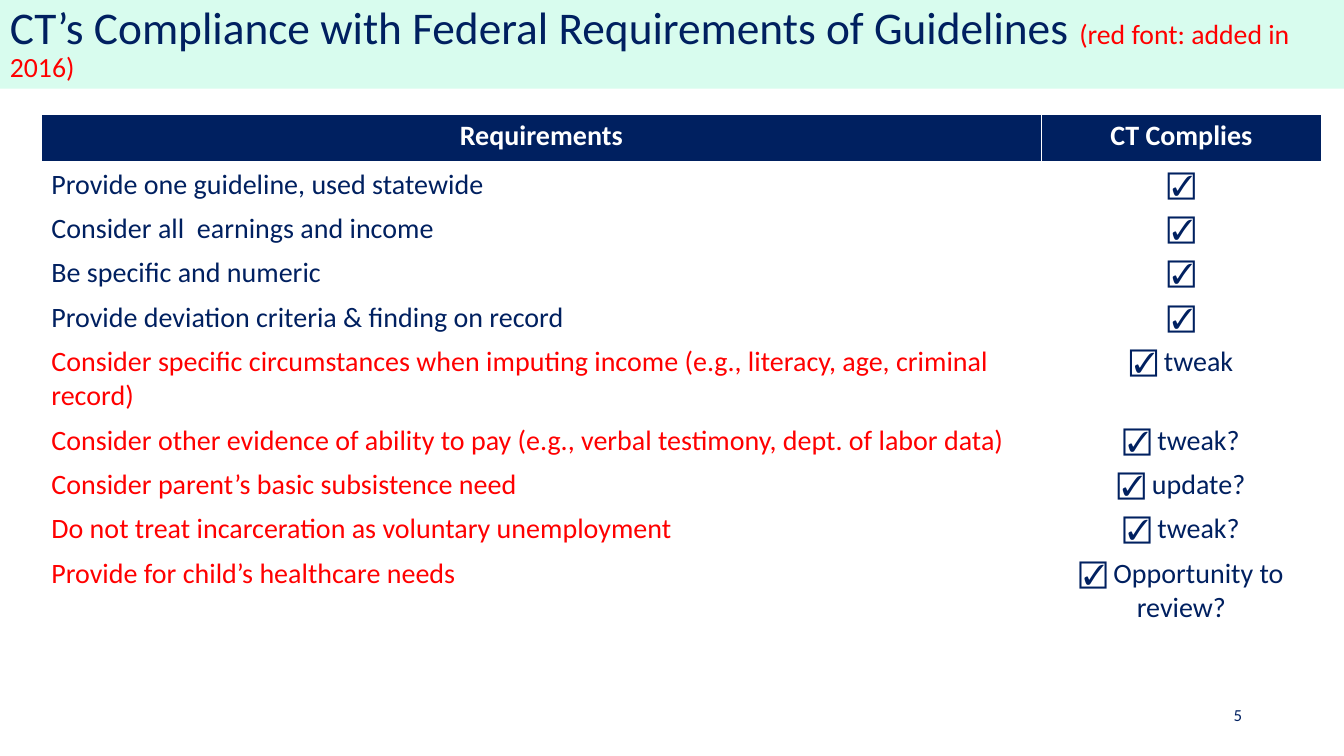
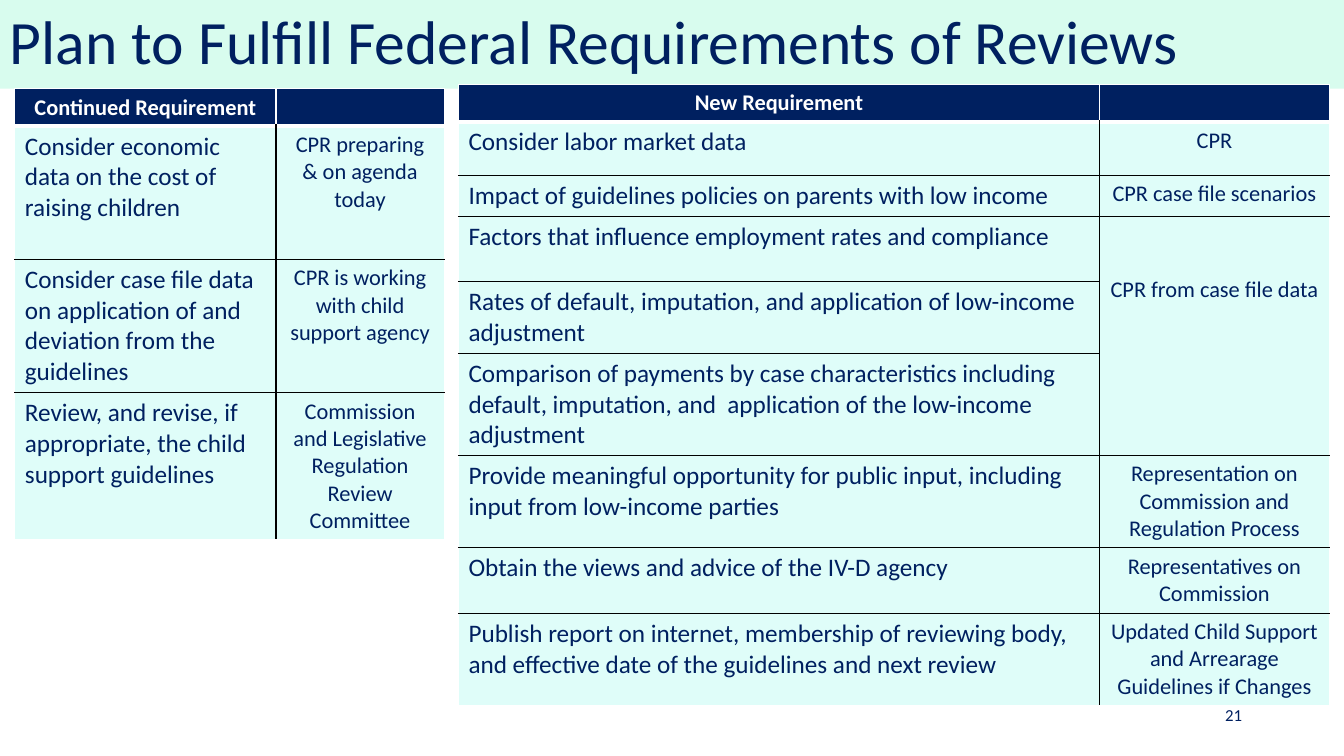
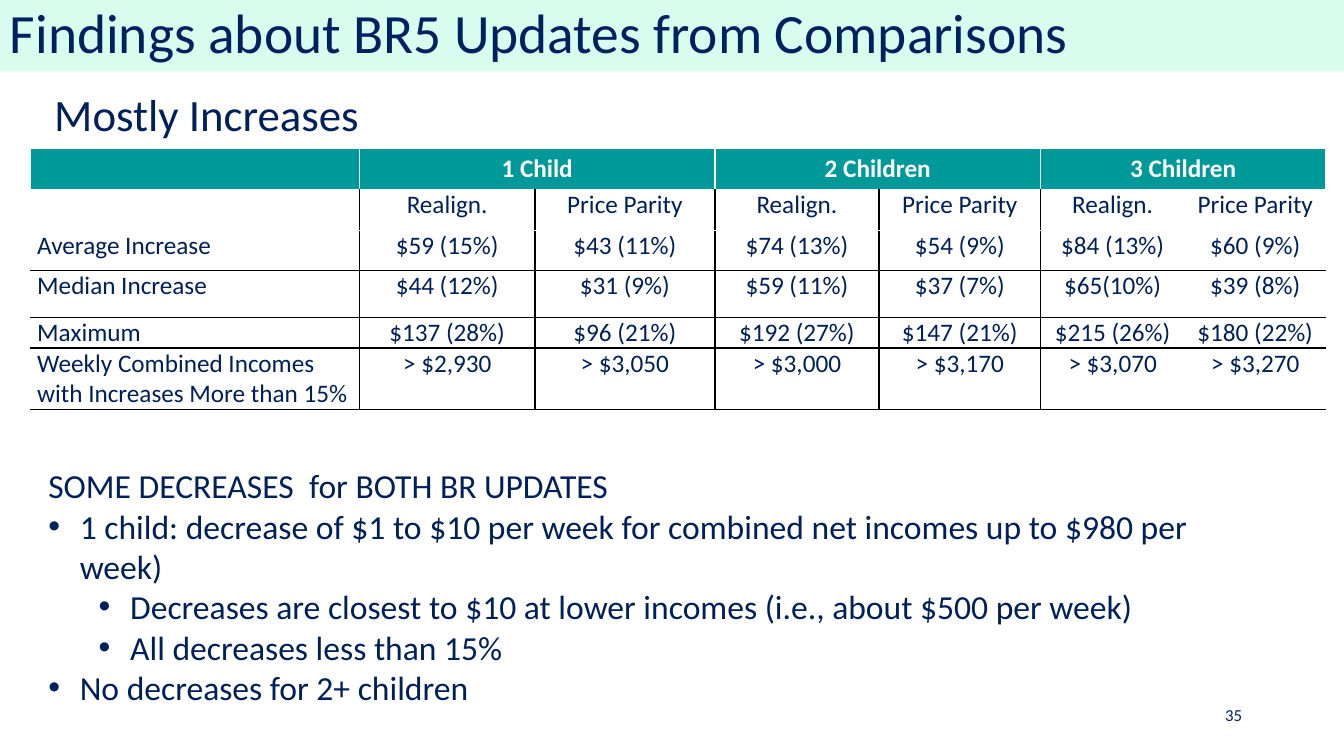
"""Build three slides on child support guideline requirements and review findings."""
from lxml import etree
from pptx import Presentation
from pptx.dml.color import RGBColor
from pptx.enum.shapes import MSO_SHAPE
from pptx.enum.text import MSO_ANCHOR, PP_ALIGN
from pptx.oxml.ns import qn
from pptx.util import Pt

LEFT, CENTER, RIGHT = PP_ALIGN.LEFT, PP_ALIGN.CENTER, PP_ALIGN.RIGHT
MIDDLE = MSO_ANCHOR.MIDDLE
RECTANGLE = MSO_SHAPE.RECTANGLE

FONT = "Calibri"
NAVY, INK, RED, WHITE, BLACK = "002060", "00205B", "FF0000", "FFFFFF", "000000"
MINT, PALE, TEAL = "D8FCEE", "DFFDF9", "009999"
PLAIN_TABLE = "{2D5ABB26-0587-4C30-8999-92F81FD0307C}"
SLIDE_WIDTH, SLIDE_HEIGHT = 960, 540

COMPLIANCE = {
    "at": (29.5, 81.4), "columns": (714.3, 200.2),
    "heights": (34.6, *[31.7] * 4, 56.1, *[31.7] * 3, 56.1),
    "header_fill": NAVY, "header_size": 20, "header_rule": 3,
    "sizes": (20, 20), "ink": NAVY, "red_from": 5,
    "rows": [
        ("Requirements", "CT Complies"),
        ("Provide one guideline, used statewide", "☑"),
        ("Consider all  earnings and income", "☑"),
        ("Be specific and numeric", "☑"),
        ("Provide deviation criteria & finding on record", "☑"),
        ("Consider specific circumstances when imputing income "
         "(e.g., literacy, age, criminal record)", "☑ tweak"),
        ("Consider other evidence of ability to pay "
         "(e.g., verbal testimony, dept. of labor data)", "☑ tweak?"),
        ("Consider parent’s basic subsistence need", "☑ update?"),
        ("Do not treat incarceration as voluntary unemployment", "☑ tweak?"),
        ("Provide for child’s healthcare needs", "☑ Opportunity to review?"),
    ],
}

REVIEW_STYLE = {
    "header_fill": NAVY, "header_size": 16, "header_rule": 3,
    "body_fill": PALE, "sizes": (18, 16), "ink": NAVY, "lines_after": (0,),
}

CONTINUED = {
    **REVIEW_STYLE,
    "at": (10.6, 63.4), "columns": (186.5, 120.2),
    "heights": (26.7, 95.2, 95.2, 104.9), "lines_below": (1, 2),
    "rows": [
        ("Continued Requirement", ""),
        ("Consider economic data on the cost of raising children",
         "CPR preparing & on agenda today"),
        ("Consider case file data on application of and deviation from the guidelines",
         "CPR is working with child support agency"),
        ("Review, and revise, if appropriate, the child support guidelines",
         "Commission and Legislative Regulation Review Committee"),
    ],
}

NEW = {
    **REVIEW_STYLE,
    "at": (327.5, 60.4), "columns": (457.9, 164.2),
    "heights": (26.7, 38.2, 29.2, 46.8, 51.1, 73.1, 65.8, 46.8, 65.8),
    "lines_below": range(1, 8), "merges": [((3, 1), (5, 1))],
    "top_insets": {(3, 1): 42.7},
    "rows": [
        ("New Requirement", ""),
        ("Consider labor market data", "CPR"),
        ("Impact of guidelines policies on parents with low income",
         "CPR case file scenarios"),
        ("Factors that influence employment rates and compliance",
         "CPR from case file data"),
        ("Rates of default, imputation, and application of low-income adjustment", None),
        ("Comparison of payments by case characteristics including default, "
         "imputation, and  application of the low-income adjustment", None),
        ("Provide meaningful opportunity for public input, including input "
         "from low-income parties",
         "Representation on Commission and Regulation Process"),
        ("Obtain the views and advice of the IV-D agency",
         "Representatives on Commission"),
        ("Publish report on internet, membership of reviewing body, and "
         "effective date of the guidelines and next review",
         "Updated Child Support and Arrearage Guidelines if Changes"),
    ],
}

INCREASES = {
    "at": (21.6, 105.9), "columns": (235.2, 125.3, 128.6, 117.2, 115.5, 102.9, 100.8),
    "heights": (29.2, 29.5, 28.8, 33.2, 22, 44),
    "header_fill": TEAL, "header_size": 18, "header_rule": 1,
    "body_fill": WHITE, "sizes": (18,) * 7, "ink": INK, "body_insets": (5, 0),
    "lines_after": range(5), "lines_below": range(2, 6),
    "merges": [((0, col), (0, col + 1)) for col in (1, 3, 5)],
    "rows": [
        ("", "1 Child", None, "2 Children", None, "3 Children", None),
        ("", *["Realign.", "Price Parity"] * 3),
        ("Average Increase", "$59 (15%)", "$43 (11%)", "$74 (13%)", "$54 (9%)",
         "$84 (13%)", "$60 (9%)"),
        ("Median Increase", "$44 (12%)", "$31 (9%)", "$59 (11%)", "$37 (7%)",
         "$65(10%)", "$39 (8%)"),
        ("Maximum", "$137 (28%)", "$96 (21%)", "$192 (27%)", "$147 (21%)",
         "$215 (26%)", "$180 (22%)"),
        ("Weekly Combined Incomes with Increases More than 15%", "> $2,930",
         "> $3,050", "> $3,000", "> $3,170", "> $3,070", "> $3,270"),
    ],
}

DECREASES = [
    (None, "SOME DECREASES  for BOTH BR UPDATES"),
    (0, "1 child: decrease of $1 to $10 per week for combined net incomes "
        "up to $980 per week)"),
    (1, "Decreases are closest to $10 at lower incomes (i.e., about $500 per week)"),
    (1, "All decreases less than 15%"),
    (0, "No decreases for 2+ children"),
]

SLIDES = [
    {"number": "5", "band": 63.4, "tables": [COMPLIANCE],
     "title": [("CT’s Compliance with Federal Requirements of Guidelines ", 32.4, NAVY),
               ("(red font: added in 2016)", 19.8, RED)]},
    {"number": "21", "band": 63.4, "tables": [CONTINUED, NEW],
     "title": [("Plan to Fulfill Federal Requirements of Reviews", 44, NAVY)]},
    {"number": "35", "band": 51, "tables": [INCREASES],
     "title": [("Findings about BR5 Updates from Comparisons", 39.6, NAVY)],
     "texts": [((31.7, 58.3, 460.8, 46), 32, [(None, "Mostly Increases")]),
               ((27.4, 328.8, 882.7, 183), 24, DECREASES)]},
]


def rgb(color):
    return RGBColor.from_string(color)


def add_run(paragraph, text, size, color, bold=False):
    run = paragraph.add_run()
    run.text = text
    font = run.font
    font.name, font.size, font.bold = FONT, Pt(size), bold
    font.color.rgb = rgb(color)


def add_title(slide, runs, height):
    band = slide.shapes.add_shape(RECTANGLE, 0, 0, Pt(SLIDE_WIDTH), Pt(height))
    band.shadow.inherit = False
    band.fill.solid()
    band.fill.fore_color.rgb = rgb(MINT)
    band.line.fill.background()
    band.text_frame.word_wrap = True
    band.text_frame.vertical_anchor = MIDDLE
    paragraph = band.text_frame.paragraphs[0]
    paragraph.alignment, paragraph.line_spacing = LEFT, 0.9
    for text, size, color in runs:
        add_run(paragraph, text, size, color)


def add_text_frame(slide, box):
    frame = slide.shapes.add_textbox(*map(Pt, box)).text_frame
    frame.word_wrap = True
    return frame


def add_number(slide, number):
    frame = add_text_frame(slide, (859.7, 501.8, 34.6, 17.3))
    frame.vertical_anchor = MIDDLE
    frame.paragraphs[0].alignment = RIGHT
    add_run(frame.paragraphs[0], number, 12, NAVY)


def add_outline(slide, box, size, lines):
    frame = add_text_frame(slide, box)
    for index, (level, text) in enumerate(lines):
        paragraph = frame.add_paragraph() if index else frame.paragraphs[0]
        if level is not None:
            paragraph.level = level
            properties = paragraph._p.get_or_add_pPr()
            properties.set("marL", str(Pt(22.5 + 36 * level)))
            properties.set("indent", str(Pt(-22.5)))
            etree.SubElement(properties, qn("a:buFont"), typeface="Arial")
            etree.SubElement(properties, qn("a:buChar"), char="•")
        add_run(paragraph, text, size, INK)


def add_borders(cell, row, col, table):
    """Rule the cell: white by default, black along the table's listed lines."""
    after = table.get("lines_after", ()) if row else ()
    below = table.get("lines_below", ())
    sides = (("L", col - 1 in after, 1), ("R", col in after, 1),
             ("T", row - 1 in below, table["header_rule"] if row == 1 else 1),
             ("B", row in below, 1 if row else table["header_rule"]))
    for side, is_black, width in sides:
        line = etree.SubElement(cell._tc.get_or_add_tcPr(), qn("a:ln" + side),
                                w=str(Pt(width)))
        solid = etree.SubElement(line, qn("a:solidFill"))
        etree.SubElement(solid, qn("a:srgbClr"), val=BLACK if is_black else WHITE)


def fill_cell(cell, row, col, table):
    text = table["rows"][row][col]
    is_header = row == 0
    add_borders(cell, row, col, table)
    fill = table["header_fill"] if is_header else table.get("body_fill")
    if fill:
        cell.fill.solid()
        cell.fill.fore_color.rgb = rgb(fill)
    else:
        cell.fill.background()
    if not is_header and "body_insets" in table:
        across, down = map(Pt, table["body_insets"])
        cell.margin_left = cell.margin_right = across
        cell.margin_top = cell.margin_bottom = down
    if (row, col) in table.get("top_insets", {}):
        cell.margin_top = Pt(table["top_insets"][row, col])
    size = table["header_size"] if is_header else table["sizes"][col]
    paragraph = cell.text_frame.paragraphs[0]
    paragraph.alignment = CENTER if is_header or col else LEFT
    if not text:
        etree.SubElement(paragraph._p, qn("a:endParaRPr"), sz=str(size * 100))
        return
    is_added = col == 0 and row >= table.get("red_from", len(table["rows"]))
    color = WHITE if is_header else RED if is_added else table["ink"]
    add_run(paragraph, text, size, color, is_header)


def add_table(slide, table):
    columns, heights = table["columns"], table["heights"]
    box = (*table["at"], sum(columns), sum(heights))
    grid = slide.shapes.add_table(len(heights), len(columns), *map(Pt, box)).table
    grid._tbl.tblPr[-1].text = PLAIN_TABLE
    grid.horz_banding = False
    for column, width in zip(grid.columns, columns):
        column.width = Pt(width)
    for line, height in zip(grid.rows, heights):
        line.height = Pt(height)
    for first, last in table.get("merges", ()):
        grid.cell(*first).merge(grid.cell(*last))
    for row in range(len(heights)):
        for col in range(len(columns)):
            cell = grid.cell(row, col)
            if not cell.is_spanned:
                fill_cell(cell, row, col, table)


def main():
    deck = Presentation()
    deck.slide_width, deck.slide_height = Pt(SLIDE_WIDTH), Pt(SLIDE_HEIGHT)
    for content in SLIDES:
        slide = deck.slides.add_slide(deck.slide_layouts[6])
        add_title(slide, content["title"], content["band"])
        add_number(slide, content["number"])
        for table in content["tables"]:
            add_table(slide, table)
        for box, size, lines in content.get("texts", ()):
            add_outline(slide, box, size, lines)
    deck.save("out.pptx")


if __name__ == "__main__":
    main()
